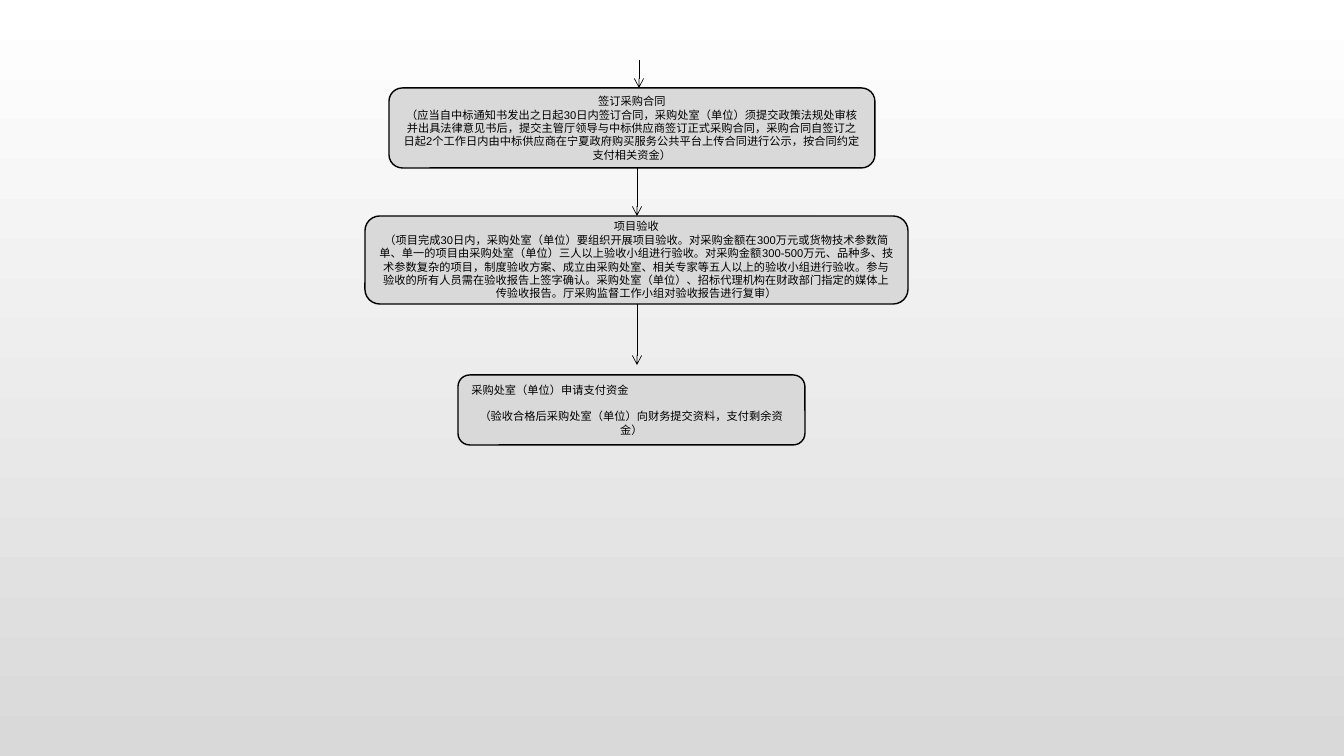
from lxml import etree
from pptx import Presentation
from pptx.dml.color import RGBColor
from pptx.enum.shapes import MSO_CONNECTOR, MSO_SHAPE
from pptx.enum.text import MSO_ANCHOR, PP_ALIGN
from pptx.oxml.ns import qn
from pptx.util import Emu, Pt

ROUNDED = MSO_SHAPE.ROUNDED_RECTANGLE
STRAIGHT = MSO_CONNECTOR.STRAIGHT
CENTER, LEFT = PP_ALIGN.CENTER, PP_ALIGN.LEFT
MIDDLE = MSO_ANCHOR.MIDDLE

BLACK = RGBColor(0x00, 0x00, 0x00)
WHITE = RGBColor(0xFF, 0xFF, 0xFF)
GRAY = RGBColor(0xD9, 0xD9, 0xD9)


def px(n):
    return Emu(round(n * 914400 / 100.8))


prs = Presentation()
prs.slide_width, prs.slide_height = px(1344), px(756)
slide = prs.slides.add_slide(prs.slide_layouts[6])

bg = slide.background.fill
bg.gradient()
bg.gradient_angle = 270
for stop, color in zip(bg.gradient_stops, (WHITE, GRAY)):
    stop.color.rgb = color

# left, top, width, height, heading alignment, gap after heading (pt), heading, detail
steps = [
    (389, 88, 486, 80, CENTER, 0, "签订采购合同",
     "（应当自中标通知书发出之日起30日内签订合同，采购处室（单位）须提交政策法规处审核"
     "并出具法律意见书后，提交主管厅领导与中标供应商签订正式采购合同，采购合同自签订之"
     "日起2个工作日内由中标供应商在宁夏政府购买服务公共平台上传合同进行公示，按合同约"
     "定支付相关资金）"),
    (365, 216, 543, 88, CENTER, 0, "项目验收",
     "（项目完成30日内，采购处室（单位）要组织开展项目验收。对采购金额在300万元或货物技术参数简"
     "单、单一的项目由采购处室（单位）三人以上验收小组进行验收。对采购金额300-500万元、品种多、"
     "技术参数复杂的项目，制度验收方案、成立由采购处室、相关专家等五人以上的验收小组进行验收。参"
     "与验收的所有人员需在验收报告上签字确认。采购处室（单位）、招标代理机构在财政部门指定的媒体"
     "上传验收报告。厅采购监督工作小组对验收报告进行复审）"),
    (458, 375, 347, 70, LEFT, 9, "采购处室（单位）申请支付资金",
     "（验收合格后采购处室（单位）向财务提交资料，支付剩余资金）"),
]
for left, top, width, height, align, gap, heading, detail in steps:
    sp = slide.shapes.add_shape(ROUNDED, px(left), px(top), px(width), px(height))
    sp.shadow.inherit = False
    sp.fill.solid()
    sp.fill.fore_color.rgb = GRAY
    sp.line.color.rgb = BLACK
    sp.line.width = Pt(1)
    tf = sp.text_frame
    tf.word_wrap = True
    tf.vertical_anchor = MIDDLE
    tf.text = f"{heading}\n{detail}"
    for p in tf.paragraphs:
        p.alignment = CENTER
        p.font.name = "Arial"
        p.font.size = Pt(8)
        p.font.color.rgb = BLACK
    tf.paragraphs[0].alignment = align
    tf.paragraphs[0].space_after = Pt(gap)

# x, start y, end y
for x, start, end in [(637, 168, 216), (637, 304, 365), (639, 60, 88)]:
    arrow = slide.shapes.add_connector(STRAIGHT, px(x), px(start), px(x), px(end))
    arrow.line.color.rgb = BLACK
    arrow.line.width = Pt(0.5)
    etree.SubElement(arrow.line._get_or_add_ln(), qn("a:tailEnd"), type="arrow")
    etree.SubElement(arrow._element.spPr, qn("a:effectLst"))

prs.save("out.pptx")
